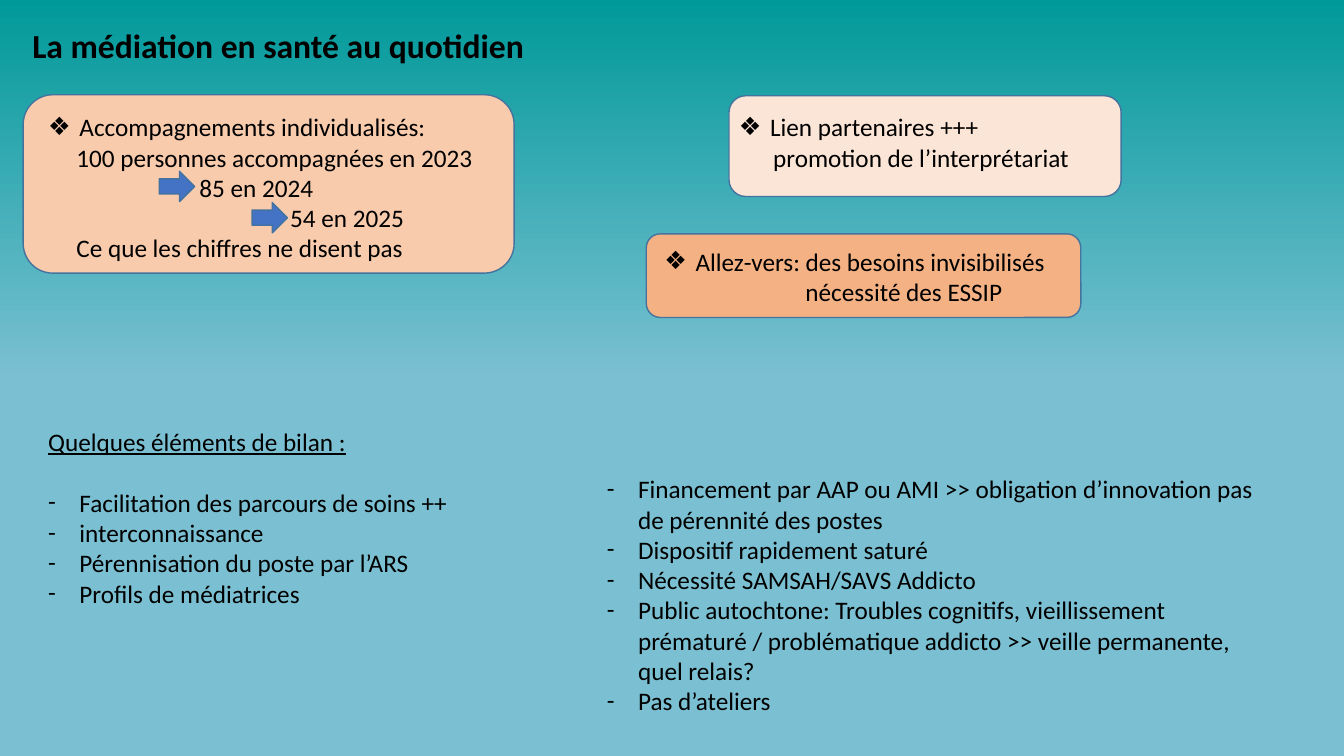
from copy import deepcopy
from dataclasses import dataclass

from lxml import etree
from pptx import Presentation
from pptx.dml.color import RGBColor
from pptx.enum.shapes import MSO_SHAPE
from pptx.enum.text import MSO_ANCHOR, MSO_AUTO_SIZE, PP_ALIGN
from pptx.oxml.ns import qn
from pptx.util import Inches, Pt

ROUND = MSO_SHAPE.ROUNDED_RECTANGLE
ARROW = MSO_SHAPE.RIGHT_ARROW
TOP = MSO_ANCHOR.TOP
LEFT = PP_ALIGN.LEFT
FIXED = MSO_AUTO_SIZE.NONE
TITLE_ONLY = 5


@dataclass(frozen=True)
class Theme:
    font: str = "Calibri"
    head: int = 24
    body: int = 18
    gap: int = 22
    hang: float = 0.31
    ink: str = "000000"
    edge: str = "43739E"
    arrow: str = "4472C4"
    peach: str = "F8CBAD"
    cream: str = "FBE5D6"
    orange: str = "F4B183"
    sky: tuple = ((0, "009999"), (0.34, "54B4C0"), (0.5, "7BC0D2"))


THEME = Theme()


def rgb(code):
    return RGBColor.from_string(code)


def paint_sky(slide):
    fill = slide.background.fill
    fill.gradient()
    fill.gradient_angle = 270
    stops = next(slide.element.iter(qn("a:gsLst")))
    stops.insert(1, deepcopy(stops[0]))
    for stop, (place, code) in zip(fill.gradient_stops, THEME.sky):
        stop.position = place
        stop.color.rgb = rgb(code)


def add_form(slide, kind, box, color):
    form = slide.shapes.add_shape(kind, *map(Inches, box))
    form.shadow.inherit = False
    form.fill.solid()
    form.fill.fore_color.rgb = rgb(color)
    form.line.color.rgb = rgb(THEME.edge)
    form.line.width = Pt(1)


def write(para, text, size=THEME.body, bold=False, under=False,
          mark=None, indent=0, after=0):
    """Fill one paragraph; a mark makes it a hanging bullet."""
    para.alignment = LEFT
    para.space_after = Pt(after)
    run = para.add_run()
    run.text = text
    font = run.font
    font.name, font.size = THEME.font, Pt(size)
    font.bold, font.underline = bold, under
    font.color.rgb = rgb(THEME.ink)
    props = para._p.get_or_add_pPr()
    props.set("marL", str(Inches(THEME.hang if mark else indent)))
    props.set("indent", str(Inches(-THEME.hang if mark else 0)))
    if mark:
        etree.SubElement(props, qn("a:buFont"), typeface=THEME.font)
        etree.SubElement(props, qn("a:buChar"), char=mark)


def set_frame(frame):
    frame.word_wrap = True
    frame.auto_size = FIXED
    frame.vertical_anchor = TOP


def add_text(slide, box, lines):
    frame = slide.shapes.add_textbox(*map(Inches, box)).text_frame
    set_frame(frame)
    for spot, (text, style) in enumerate(lines):
        para = frame.add_paragraph() if spot else frame.paragraphs[0]
        write(para, text, **style)


def set_title(slide, box, text):
    title = slide.shapes.title
    title.left, title.top, title.width, title.height = map(Inches, box)
    set_frame(title.text_frame)
    write(title.text_frame.paragraphs[0], text, size=THEME.head, bold=True)


def main():
    deck = Presentation()
    deck.slide_width, deck.slide_height = Inches(13.33), Inches(7.5)
    slide = deck.slides.add_slide(deck.slide_layouts[TITLE_ONLY])
    paint_sky(slide)
    set_title(slide, (0.22, 0.2, 9.36, 0.5),
              "La médiation en santé au quotidien")

    star, dash = {"mark": "❖"}, {"mark": "-"}

    # Cards and their text
    cards = [
        ((6.41, 2.32, 4.31, 0.83), THEME.orange, (6.49, 2.39, 4.02, 0.71), [
            ("Allez-vers: des besoins invisibilisés", star),
            ("nécessité des ESSIP", {"indent": 1.4}),
        ]),
        ((7.23, 0.95, 3.89, 1), THEME.cream, (7.23, 1.06, 3.52, 0.71), [
            ("Lien partenaires +++", star),
            ("promotion de l’interprétariat", {"indent": 0.34}),
        ]),
        ((0.23, 0.94, 4.87, 1.77), THEME.peach, (0.38, 1.06, 4.48, 1.6), [
            ("Accompagnements individualisés:", star),
            ("100 personnes accompagnées en 2023", {"indent": 0.28}),
            ("85 en 2024", {"indent": 1.5}),
            ("54 en 2025", {"indent": 2.4}),
            ("Ce que les chiffres ne disent pas", {"indent": 0.28}),
        ]),
    ]
    for box, color, area, lines in cards:
        add_form(slide, ROUND, box, color)
        add_text(slide, area, lines)

    # Arrows before the yearly counts
    for left, top in ((1.58, 1.7), (2.5, 2.01)):
        add_form(slide, ARROW, (left, top, 0.35, 0.3), THEME.arrow)

    # Review: gains on the left, limits on the right
    gains = [
        "Facilitation des parcours de soins ++",
        "interconnaissance",
        "Pérennisation du poste par l’ARS",
        "Profils de médiatrices",
    ]
    limits = [
        "Financement par AAP ou AMI >> obligation d’innovation pas "
        "de pérennité des postes",
        "Dispositif rapidement saturé",
        "Nécessité SAMSAH/SAVS Addicto",
        "Public autochtone: Troubles cognitifs, vieillissement prématuré / "
        "problématique addicto >> veille permanente, quel relais?",
        "Pas d’ateliers",
    ]
    intro = ("Quelques éléments de bilan :",
             {"under": True, "after": THEME.gap})
    add_text(slide, (0.38, 4.18, 5.5, 2.2),
             [intro] + [(gain, dash) for gain in gains])
    add_text(slide, (5.92, 4.65, 6.62, 2.83),
             [(limit, dash) for limit in limits])

    deck.save("out.pptx")


if __name__ == "__main__":
    main()
